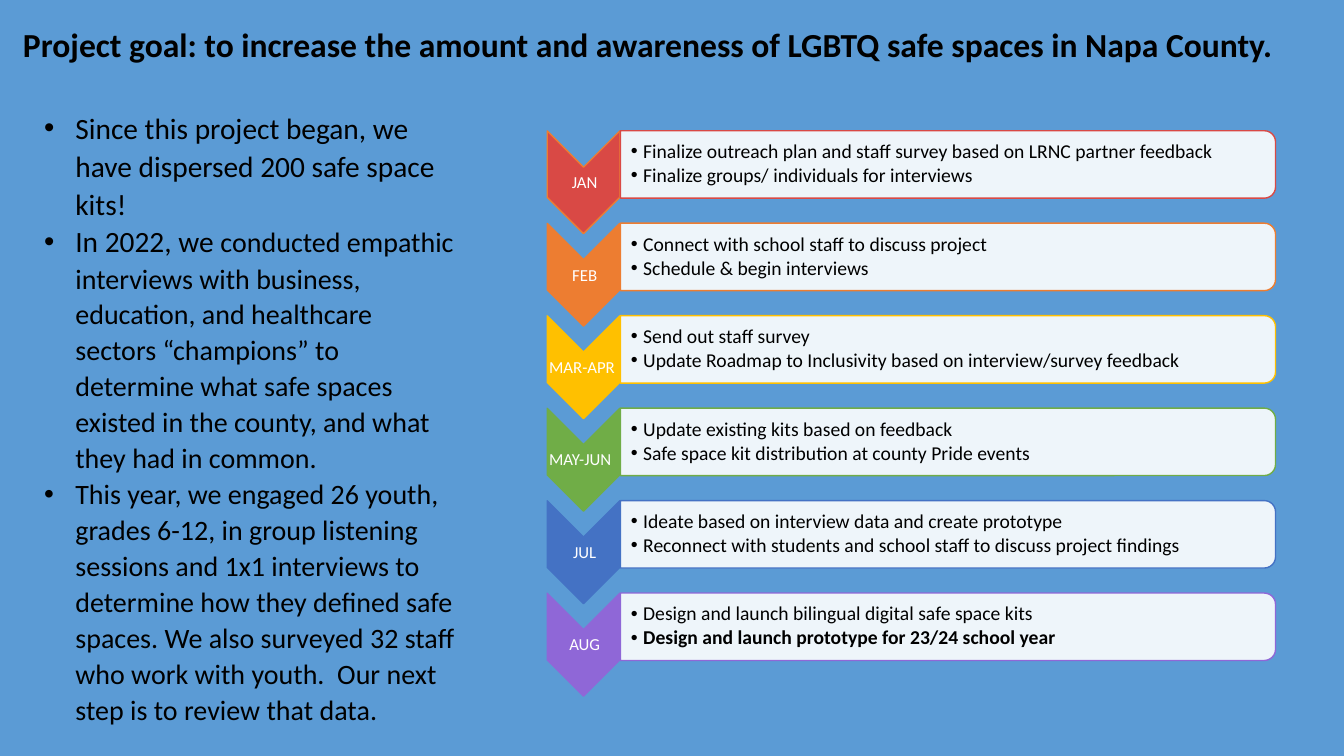
from dataclasses import dataclass
from lxml.etree import SubElement
from pptx import Presentation
from pptx.dml.color import RGBColor as Rgb
from pptx.enum.shapes import MSO_SHAPE as Kind
from pptx.enum.text import MSO_ANCHOR as Anchor, MSO_AUTO_SIZE as Fit, PP_ALIGN as Align
from pptx.oxml.ns import qn
from pptx.util import Cm, Pt


@dataclass(frozen=True)
class Theme:
    font: str = "Calibri"
    back: str = "5B9BD5"
    ink: str = "000000"
    white: str = "FFFFFF"
    title: int = 24
    lead: int = 21
    body: int = 20
    item: int = 14
    label: int = 12


@dataclass(frozen=True)
class Box:
    left: float
    top: float
    width: float
    height: float

    def down(self, step: float) -> "Box":
        return Box(self.left, self.top + step, self.width, self.height)

    def size(self) -> tuple:
        return Cm(self.left), Cm(self.top), Cm(self.width), Cm(self.height)


@dataclass(frozen=True)
class Run:
    text: str
    size: int
    color: str = Theme.ink
    bold: bool = False


@dataclass(frozen=True)
class Style:
    space: float = 1.0
    after: float = 0
    indent: float = 0
    hang: float = 0
    align: Align = Align.LEFT


@dataclass(frozen=True)
class Stage:
    month: str
    color: str
    items: tuple
    edge: str = ""
    align: Align = Align.CENTER
    strong: int = -1


THEME = Theme()
PITCH = 2.33
TITLE = Box(0.33, 0.48, 33.2, 1.27)
NOTES = Box(-0.41, 2.59, 12.22, 15.95)
ARROW = Box(13.41, 3.68, 2.59, 1.83)
LABEL = Box(13.82, 4.22, 1.83, 0.79)
PANEL = Box(23.04, -4.11, 1.7, 16.51)
ITEMS = Box(15.62, 3.38, 16.43, 1.52)
PLAIN = Style()
NOTE = Style(space=1.07, indent=2.06, hang=0.79)
ITEM = Style(space=0.9, after=2, indent=0.31, hang=0.31)

GOAL = "Project goal: to increase the amount and awareness of LGBTQ safe spaces in Napa County."
FACTS = [
    [Run("Since this project began, we have dispersed 200 safe space kits!", THEME.lead)],
    [Run("In 2022, we ", THEME.lead),
     Run("conducted empathic interviews with business, education, and healthcare sectors "
         "“champions” to determine what safe spaces existed in the county, and what they "
         "had in common.", THEME.body)],
    [Run("This year, we engaged 26 youth, grades 6-12, in group listening sessions and 1x1 "
         "interviews to determine how they defined safe spaces. We also surveyed 32 staff "
         "who work with youth.  Our next step is to review that data.", THEME.body)],
]
STAGES = [
    Stage("JAN", "D94945", ("Finalize outreach plan and staff survey based on LRNC partner feedback",
                            "Finalize groups/ individuals for interviews"), edge="ED7D31"),
    Stage("FEB", "ED7D31", ("Connect with school staff to discuss project",
                            "Schedule & begin interviews")),
    Stage("MAR-APR", "FFC000", ("Send out staff survey",
                                "Update Roadmap to Inclusivity based on interview/survey feedback"),
          align=Align.LEFT),
    Stage("MAY-JUN", "70AD47", ("Update existing kits based on feedback",
                                "Safe space kit distribution at county Pride events"),
          align=Align.LEFT),
    Stage("JUL", "4472C4", ("Ideate based on interview data and create prototype",
                            "Reconnect with students and school staff to discuss project findings")),
    Stage("AUG", "8F67D7", ("Design and launch bilingual digital safe space kits",
                            "Design and launch prototype for 23/24 school year"), strong=1),
]


def write(shapes, box: Box, lines: list, style: Style, pad: tuple = (), fit: Fit = Fit.NONE) -> None:
    """Add a text box with one paragraph for each list of runs."""
    frame = shapes.add_textbox(*box.size()).text_frame
    frame.word_wrap = True
    frame.auto_size = fit
    if pad:
        frame.vertical_anchor = Anchor.MIDDLE
        (frame.margin_left, frame.margin_top,
         frame.margin_right, frame.margin_bottom) = map(Cm, pad)
    for num, runs in enumerate(lines):
        para = frame.add_paragraph() if num else frame.paragraphs[0]
        para.alignment = style.align
        para.line_spacing = style.space
        para.space_after = Pt(style.after)
        if style.hang:
            para.level = 1
            props = para._p.get_or_add_pPr()
            props.set("marL", str(Cm(style.indent)))
            props.set("indent", str(-Cm(style.hang)))
            SubElement(props, qn("a:buFont")).set("typeface", "Arial")
            SubElement(props, qn("a:buChar")).set("char", "•")
        for part in runs:
            run = para.add_run()
            run.text = part.text
            run.font.name = THEME.font
            run.font.size = Pt(part.size)
            run.font.bold = part.bold
            run.font.color.rgb = Rgb.from_string(part.color)


def block(shapes, kind: Kind, box: Box, fill: str, edge: str, alpha: int = 100) -> None:
    """Add a filled shape turned a quarter to the right."""
    shape = shapes.add_shape(kind, *box.size())
    shape.rotation = 90
    shape.shadow.inherit = False
    shape.fill.solid()
    shape.fill.fore_color.rgb = Rgb.from_string(fill)
    shape.line.color.rgb = Rgb.from_string(edge)
    shape.line.width = Pt(1)
    if alpha < 100:
        color = shape.element.spPr.find(qn("a:solidFill")).find(qn("a:srgbClr"))
        SubElement(color, qn("a:alpha")).set("val", str(alpha * 1000))


def draw(shapes, stage: Stage, step: float) -> None:
    """Draw one stage of the timeline."""
    block(shapes, Kind.CHEVRON, ARROW.down(step), stage.color, stage.edge or stage.color)
    write(shapes, LABEL.down(step), [[Run(stage.month, THEME.label, THEME.white)]],
          Style(space=0.9, after=4, align=stage.align), (0.02,) * 4)
    block(shapes, Kind.ROUND_2_SAME_RECTANGLE, PANEL.down(step), THEME.white, stage.color, 90)
    lines = [[Run(text, THEME.item, bold=num == stage.strong)]
             for num, text in enumerate(stage.items)]
    write(shapes, ITEMS.down(step), lines, ITEM, (0.28, 0.02, 0.02, 0.02))


def main() -> None:
    """Build and save the slide."""
    deck = Presentation()
    deck.slide_width, deck.slide_height = Cm(33.87), Cm(19.05)
    slide = deck.slides.add_slide(deck.slide_layouts[6])
    slide.background.fill.solid()
    slide.background.fill.fore_color.rgb = Rgb.from_string(THEME.back)
    write(slide.shapes, TITLE, [[Run(GOAL, THEME.title, bold=True)]], PLAIN, fit=Fit.SHAPE_TO_FIT_TEXT)
    write(slide.shapes, NOTES, FACTS, NOTE, fit=Fit.SHAPE_TO_FIT_TEXT)
    group = slide.shapes.add_group_shape()
    for num, stage in enumerate(STAGES):
        draw(group.shapes, stage, num * PITCH)
    deck.save("out.pptx")


if __name__ == "__main__":
    main()
